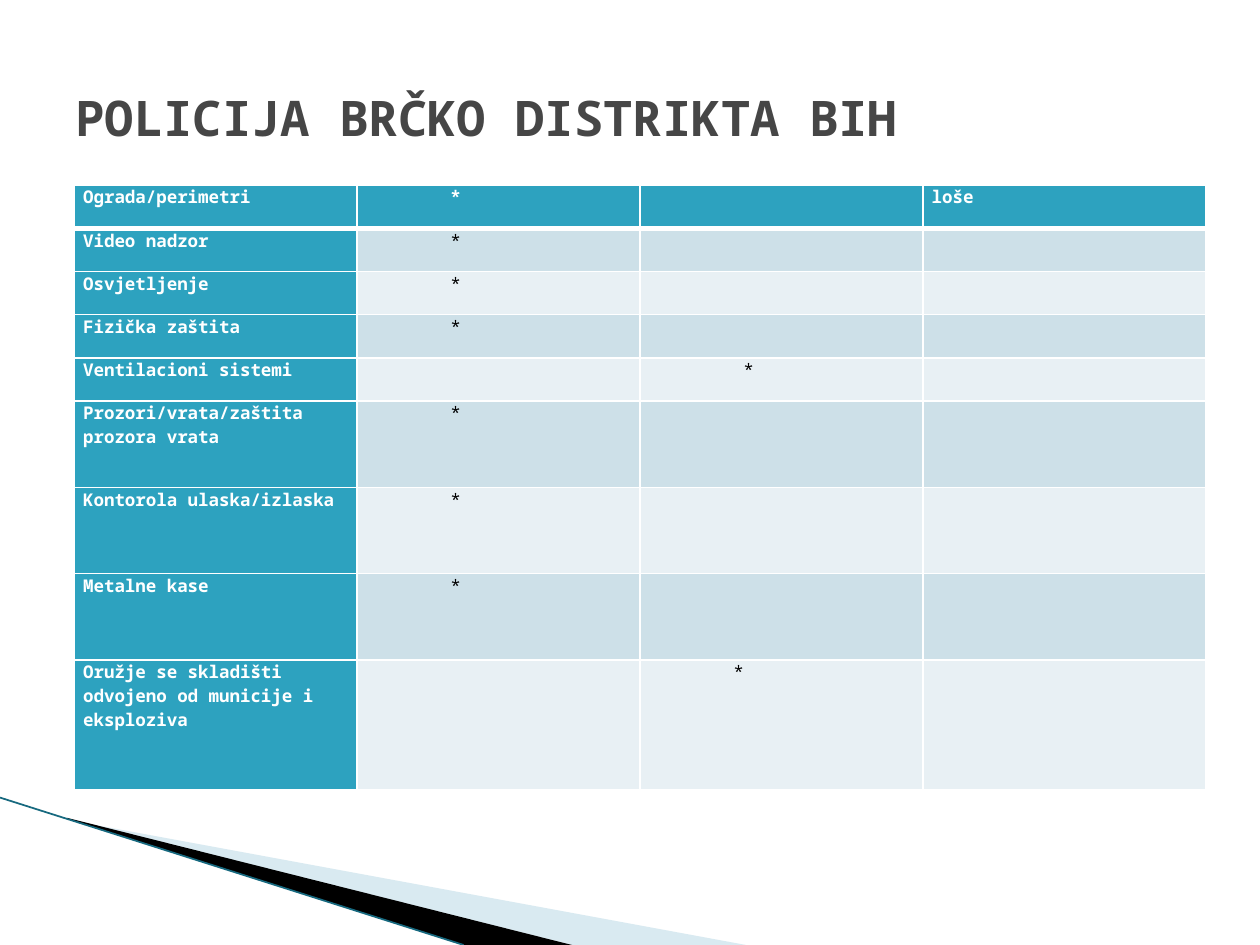
"""Build the slide on the weapons-storage security of the Brčko District police."""
from dataclasses import dataclass

from lxml import etree
from pptx import Presentation
from pptx.dml.color import RGBColor
from pptx.enum.shapes import MSO_CONNECTOR
from pptx.enum.text import MSO_ANCHOR, PP_ALIGN
from pptx.oxml.ns import qn
from pptx.util import Inches, Pt

STRAIGHT = MSO_CONNECTOR.STRAIGHT
MIDDLE = MSO_ANCHOR.MIDDLE
LEFT, JUSTIFY = PP_ALIGN.LEFT, PP_ALIGN.JUSTIFY


@dataclass(frozen=True)
class Theme:
    """Colours, type sizes and line widths of the slide."""
    font: str = "Noto Sans Mono"
    title_size: float = 28
    cell_size: float = 10
    title: str = "464646"
    header: str = "2DA2BF"
    bands: tuple = ("E8F0F4", "CDE0E8")
    light: str = "FFFFFF"
    dark: str = "000000"
    pale_wedge: str = "A0CBDC"
    edge: str = "17697F"
    thin: float = 1
    thick: float = 3


class SlideBuilder:
    """Draws styled elements on a grid of 100 columns by 75 rows."""

    def __init__(self, presentation, theme):
        self.theme = theme
        self.unit = presentation.slide_width / 100
        self.slide = presentation.slides.add_slide(presentation.slide_layouts[6])
        self.shapes = self.slide.shapes

    def grid(self, *lengths):
        return [round(length * self.unit) for length in lengths]

    def style(self, paragraph, size, color, bold):
        font = paragraph.font
        font.name, font.size, font.bold = self.theme.font, Pt(size), bold
        font.color.rgb = RGBColor.from_string(color)

    def title(self, text, box):
        frame = self.shapes.add_textbox(*self.grid(*box)).text_frame
        frame.word_wrap = True
        frame.vertical_anchor = MIDDLE
        frame.text = text
        self.style(frame.paragraphs[0], self.theme.title_size, self.theme.title, True)

    def wedge(self, points, color, opacity=100):
        start, *others = [self.grid(*point) for point in points]
        builder = self.shapes.build_freeform(*start)
        builder.add_line_segments(others, close=True)
        shape = builder.convert_to_shape()
        shape.shadow.inherit = False
        shape.line.fill.background()
        shape.fill.solid()
        shape.fill.fore_color.rgb = RGBColor.from_string(color)
        if opacity < 100:
            rgb = shape.fill._xPr.find(".//" + qn("a:srgbClr"))
            etree.SubElement(rgb, qn("a:alpha"), val=str(opacity * 1000))

    def line(self, start, end, color, width):
        connector = self.shapes.add_connector(STRAIGHT, *self.grid(*start, *end))
        connector.line.color.rgb = RGBColor.from_string(color)
        connector.line.width = Pt(width)
        etree.SubElement(connector._element.spPr, qn("a:effectLst"))

    def borders(self, cell, row):
        heavy = {"lnT": row == 1, "lnB": row == 0}
        properties = cell._tc.get_or_add_tcPr()
        for side in ("lnL", "lnR", "lnT", "lnB"):
            width = self.theme.thick if heavy.get(side) else self.theme.thin
            border = etree.SubElement(properties, qn(f"a:{side}"), w=str(Pt(width)))
            fill = etree.SubElement(border, qn("a:solidFill"))
            etree.SubElement(fill, qn("a:srgbClr"), val=self.theme.light)

    def cell(self, cell, row, column, text, indent, align):
        is_header = row == 0 or column == 0
        self.borders(cell, row)
        cell.fill.solid()
        cell.fill.fore_color.rgb = RGBColor.from_string(
            self.theme.header if is_header else self.theme.bands[row % 2])
        cell.margin_left, cell.margin_right = self.grid(0.7 + indent, 0.7)
        cell.margin_top = cell.margin_bottom = 0
        cell.text = text
        paragraph = cell.text_frame.paragraphs[0]
        paragraph.alignment = align
        color = self.theme.light if is_header else self.theme.dark
        self.style(paragraph, self.theme.cell_size, color, is_header)

    def rating_table(self, ratings, columns, box):
        height_units = sum(span for _, span, _ in ratings)
        table = self.shapes.add_table(len(ratings), columns, *self.grid(*box)).table
        for row, (label, span, marks) in enumerate(ratings):
            table.rows[row].height = self.grid(box[3] * span / height_units)[0]
            align = LEFT if span == 3 else JUSTIFY
            for column in range(columns):
                text, indent = (label, 0) if column == 0 else marks.get(column, ("", 0))
                self.cell(table.cell(row, column), row, column, text, indent, align)


GOOD = {1: ("*", 6.7)}
RATINGS = [
    ("Ograda/perimetri", 1, {**GOOD, 3: ("loše", 0)}),
    ("Video nadzor", 1, GOOD),
    ("Osvjetljenje", 1, GOOD),
    ("Fizička zaštita", 1, GOOD),
    ("Ventilacioni sistemi", 1, {2: ("*", 7.5)}),
    ("Prozori/vrata/zaštita prozora vrata", 2, GOOD),
    ("Kontorola ulaska/izlaska", 2, GOOD),
    ("Metalne kase", 2, GOOD),
    ("Oružje se skladišti odvojeno od municije i eksploziva", 3, {2: ("*", 6.7)}),
]


def main():
    presentation = Presentation()
    presentation.slide_width, presentation.slide_height = Inches(10), Inches(7.5)
    theme = Theme()
    builder = SlideBuilder(presentation, theme)
    builder.wedge([(5.5, 65.1), (59.2, 75), (45.4, 75), (5.5, 65)], theme.pale_wedge, 40)
    builder.wedge([(5.3, 64.9), (45.4, 75), (36.8, 75), (5.4, 65)], theme.dark)
    builder.line((0, 63.3), (36.8, 75), theme.edge, theme.thin)
    builder.rating_table(RATINGS, 4, (5.9, 14.7, 89.8, 48))
    builder.title("POLICIJA BRČKO DISTRIKTA BIH", (5, 3, 90, 12.5))
    presentation.save("out.pptx")


if __name__ == "__main__":
    main()
